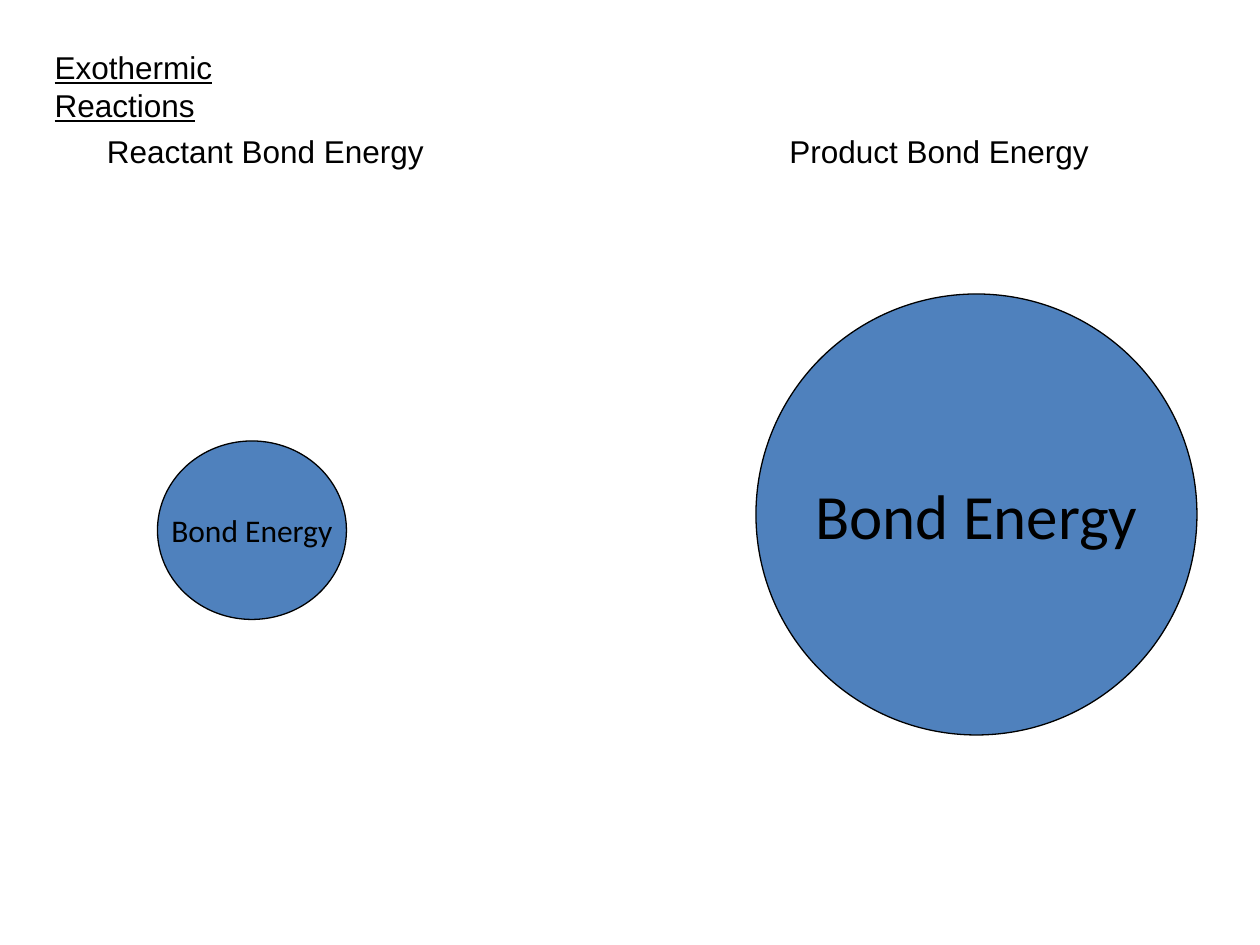
from dataclasses import dataclass

from pptx import Presentation
from pptx.dml.color import RGBColor
from pptx.enum.shapes import MSO_SHAPE
from pptx.enum.text import MSO_ANCHOR, MSO_AUTO_SIZE, PP_ALIGN
from pptx.util import Inches, Pt

OVAL = MSO_SHAPE.OVAL
TOP, MIDDLE = MSO_ANCHOR.TOP, MSO_ANCHOR.MIDDLE
LEFT, CENTER = PP_ALIGN.LEFT, PP_ALIGN.CENTER
NO_FIT, GROW = MSO_AUTO_SIZE.NONE, MSO_AUTO_SIZE.SHAPE_TO_FIT_TEXT


@dataclass(frozen=True)
class Theme:
    ink: RGBColor = RGBColor(0x00, 0x00, 0x00)
    energy: RGBColor = RGBColor(0x4F, 0x81, 0xBD)
    label_font: str = "Arial"
    energy_font: str = "Calibri"
    text_size: int = 18
    large_size: int = 36
    outline: float = 0.75


THEME = Theme()

# Content: boxes are left, top, width, height on a grid of 1/12 slide units
WIDTH, HEIGHT = 10, 7.5
UNIT = 1 / 12
HEADING = ("Exothermic Reactions", (4, 4, 31.5, 4.8))
ENERGY_LABEL = "Bond Energy"
SIDES = [
    dict(label="Reactant Bond Energy", label_box=(9, 12, 32.6, 4.8),
         circle_box=(15, 42, 18, 17), size=THEME.text_size),
    dict(label="Product Bond Energy", label_box=(74, 12, 31, 4.8),
         circle_box=(72, 28, 42, 42), size=THEME.large_size),
]


def place(box):
    return [Inches(units * UNIT) for units in box]


def write(shape, text, *, font=THEME.label_font, size=THEME.text_size,
          align=LEFT, anchor=TOP, fit=GROW, underline=None):
    frame = shape.text_frame
    frame.text = text
    frame.word_wrap = False
    frame.auto_size = fit
    frame.vertical_anchor = anchor
    paragraph = frame.paragraphs[0]
    paragraph.alignment = align
    style = paragraph.runs[0].font
    style.name, style.size, style.underline = font, Pt(size), underline
    style.color.rgb = THEME.ink


def add_energy_circle(slide, box, size):
    circle = slide.shapes.add_shape(OVAL, *place(box))
    circle.shadow.inherit = False
    circle.fill.solid()
    circle.fill.fore_color.rgb = THEME.energy
    circle.line.color.rgb = THEME.ink
    circle.line.width = Pt(THEME.outline)
    write(circle, ENERGY_LABEL, font=THEME.energy_font, size=size,
          align=CENTER, anchor=MIDDLE, fit=NO_FIT)


def main():
    deck = Presentation()
    deck.slide_width, deck.slide_height = Inches(WIDTH), Inches(HEIGHT)
    slide = deck.slides.add_slide(deck.slide_layouts[5])

    # Heading
    heading_text, heading_box = HEADING
    heading = slide.shapes.title
    heading.left, heading.top, heading.width, heading.height = place(heading_box)
    write(heading, heading_text, underline=True)

    # Labels with the energy circles below
    for side in SIDES:
        label = slide.shapes.add_textbox(*place(side["label_box"]))
        write(label, side["label"])
        add_energy_circle(slide, side["circle_box"], side["size"])

    deck.save("out.pptx")


if __name__ == "__main__":
    main()
